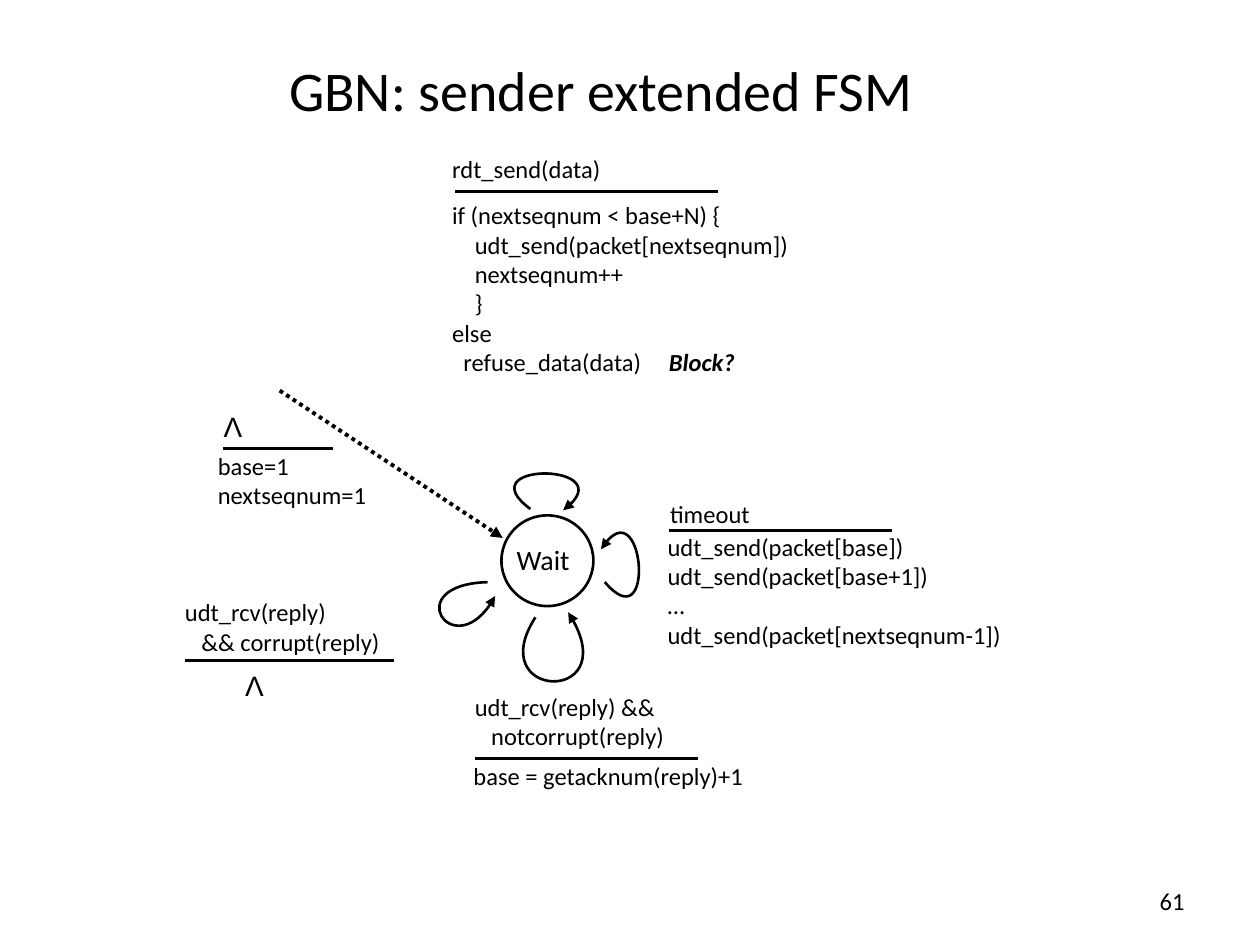
import pptx
import pptx.dml.color
import pptx.enum.dml
import pptx.enum.shapes
import pptx.enum.text
import pptx.oxml
import pptx.oxml.ns
import pptx.util

Inches = pptx.util.Inches
Pt = pptx.util.Pt
Align = pptx.enum.text.PP_ALIGN
Anchor = pptx.enum.text.MSO_ANCHOR
BLACK = pptx.dml.color.RGBColor(0x00, 0x00, 0x00)
WHITE = pptx.dml.color.RGBColor(0xFF, 0xFF, 0xFF)


def add_xml(parent, tag, **attributes):
    element = pptx.oxml.parse_xml(f"<a:{tag} {pptx.oxml.ns.nsdecls('a')}/>")
    for name, value in attributes.items():
        element.set(name, str(value))
    parent.append(element)
    return element


class FsmSlide:
    font = "Calibri"
    text_size = 14
    thin, thick = 1.5, 2.25

    def __init__(self, presentation):
        self.slide = presentation.slides.add_slide(presentation.slide_layouts[5])
        self.shapes = self.slide.shapes

    def run(self, paragraph, text, size=None, font=None, emphasis=None):
        run = paragraph.add_run()
        run.text = text
        run.font.name = font or self.font
        run.font.size = Pt(size or self.text_size)
        run.font.color.rgb = BLACK
        run.font.bold = run.font.italic = emphasis

    def title(self, text, left, top, width, height):
        title = self.shapes.title
        title.left, title.top = Inches(left), Inches(top)
        title.width, title.height = Inches(width), Inches(height)
        title.text_frame.vertical_anchor = Anchor.MIDDLE
        paragraph = title.text_frame.paragraphs[0]
        paragraph.alignment = Align.CENTER
        self.run(paragraph, text, 32)

    def text(self, lines, left, top, width, height, size=None, font=None,
             align=Align.LEFT, anchor=Anchor.TOP, wrap=True, shapes=None):
        """Each line is a string or a pair of indent in inches and string."""
        box = (shapes or self.shapes).add_textbox(
            Inches(left), Inches(top), Inches(width), Inches(height))
        frame = box.text_frame
        frame.word_wrap = wrap
        frame.vertical_anchor = anchor
        for index, line in enumerate(lines):
            indent, words = line if isinstance(line, tuple) else (0, line)
            paragraph = frame.add_paragraph() if index else frame.paragraphs[0]
            paragraph.alignment = align
            if indent:
                paragraph._p.get_or_add_pPr().set("marL", str(Inches(indent)))
            self.run(paragraph, words, size, font)
        return frame

    def stroke(self, shape, weight, arrow=False, dash=None):
        shape.line.color.rgb = BLACK
        shape.line.width = Pt(weight)
        if dash:
            shape.line.dash_style = dash
        if arrow:
            add_xml(shape.line._get_or_add_ln(), "tailEnd", type="triangle")

    def line(self, start, end, weight=thin, arrow=False, dash=None):
        connector = self.shapes.add_connector(
            pptx.enum.shapes.MSO_CONNECTOR.STRAIGHT, *map(Inches, start + end))
        self.stroke(connector, weight, arrow, dash)
        add_xml(connector._element.spPr, "effectLst")

    def rule(self, left, right, y, weight=thin):
        """Horizontal bar between an event and its actions."""
        self.line((left, y), (right, y), weight)

    def loop(self, start, *curve):
        """Arrow along one cubic curve: two control points, then the end."""
        builder = self.shapes.build_freeform(*map(Inches, start))
        builder.add_line_segments(
            [tuple(map(Inches, point)) for point in curve], close=False)
        shape = builder.convert_to_shape()
        outline = next(shape._element.iter(pptx.oxml.ns.qn("a:path")))
        bezier = add_xml(outline, "cubicBezTo")
        for segment in outline.findall(pptx.oxml.ns.qn("a:lnTo")):
            bezier.append(segment[0])
            outline.remove(segment)
        shape.fill.background()
        shape.shadow.inherit = False
        self.stroke(shape, self.thin, arrow=True)

    def state(self, name, left, top, width, height):
        group = self.shapes.add_group_shape()
        circle = group.shapes.add_shape(
            pptx.enum.shapes.MSO_SHAPE.OVAL,
            Inches(left), Inches(top), Inches(width), Inches(height))
        circle.fill.solid()
        circle.fill.fore_color.rgb = WHITE
        circle.shadow.inherit = False
        self.stroke(circle, self.thin)
        self.text([name], left - 0.11, top + 0.17, 0.88, 0.26, size=16,
                  align=Align.CENTER, shapes=group.shapes)

    def no_event(self, left, top):
        self.text(["Λ"], left, top, 0.36, 0.37, size=16, font="Arial",
                  align=Align.CENTER, wrap=False)


def main():
    presentation = pptx.Presentation()
    presentation.slide_width, presentation.slide_height = Inches(10), Inches(7.5)
    fsm = FsmSlide(presentation)

    fsm.title("GBN: sender extended FSM", 0.52, 0.32, 8.5, 0.77)
    fsm.text(["61"], 7.17, 6.95, 2.33, 0.4, align=Align.RIGHT, anchor=Anchor.MIDDLE)
    fsm.state("Wait", 3.98, 4.09, 0.73, 0.72)

    # Start
    fsm.line((2.22, 3.1), (3.99, 4.27), fsm.thick, arrow=True,
             dash=pptx.enum.dml.MSO_LINE.ROUND_DOT)
    fsm.no_event(1.67, 3.2)
    fsm.rule(1.77, 2.64, 3.56)
    fsm.text(["base=1", "nextseqnum=1"], 1.63, 3.53, 1.62, 0.55)

    # Data to send
    fsm.loop((4.21, 4.04), (3.71, 3.67), (4.98, 3.67), (4.47, 4.05))
    fsm.text(["rdt_send(data)"], 3.49, 1.17, 2.55, 0.28)
    fsm.rule(3.61, 5.7, 1.52, fsm.thick)
    actions = fsm.text(
        ["if (nextseqnum < base+N) {", (0.18, "udt_send(packet[nextseqnum])"),
         (0.18, "nextseqnum++"), (0.18, "}"), "else", (0.09, "refuse_data(data)\t")],
        3.49, 1.54, 6.04, 1.6)
    refusal = actions.paragraphs[-1]
    tabs = add_xml(refusal._p.get_or_add_pPr(), "tabLst")
    add_xml(tabs, "tab", pos=Inches(1.63), algn="l")
    fsm.run(refusal, "Block?", emphasis=True)

    # Timeout
    fsm.loop((4.8, 4.62), (5.2, 5.09), (5.11, 3.83), (4.77, 4.36))
    fsm.text(["timeout"], 5.22, 3.91, 1.2, 0.3)
    fsm.rule(5.31, 7.08, 4.21)
    fsm.text(["udt_send(packet[base])", "udt_send(packet[base+1])", "…",
              "udt_send(packet[nextseqnum-1])"], 5.2, 4.17, 3.04, 0.91)

    # Intact reply
    fsm.loop((4.25, 4.9), (3.83, 5.55), (4.99, 5.6), (4.51, 4.86))
    fsm.text(["udt_rcv(reply) &&", (0.13, "notcorrupt(reply)")], 3.67, 5.44, 3.1, 0.49)
    fsm.rule(3.77, 5.54, 6.02, fsm.thick)
    fsm.text(["base = getacknum(reply)+1"], 3.66, 5.99, 4.03, 0.91)

    # Corrupt reply
    fsm.loop((3.87, 4.62), (3.17, 4.64), (3.62, 5.31), (3.93, 4.73))
    fsm.text(["udt_rcv(reply)", (0.13, "&& corrupt(reply)")], 1.37, 4.69, 2.24, 0.49)
    fsm.rule(1.47, 3.13, 5.24)
    fsm.no_event(1.84, 5.26)

    presentation.save("out.pptx")


if __name__ == "__main__":
    main()
